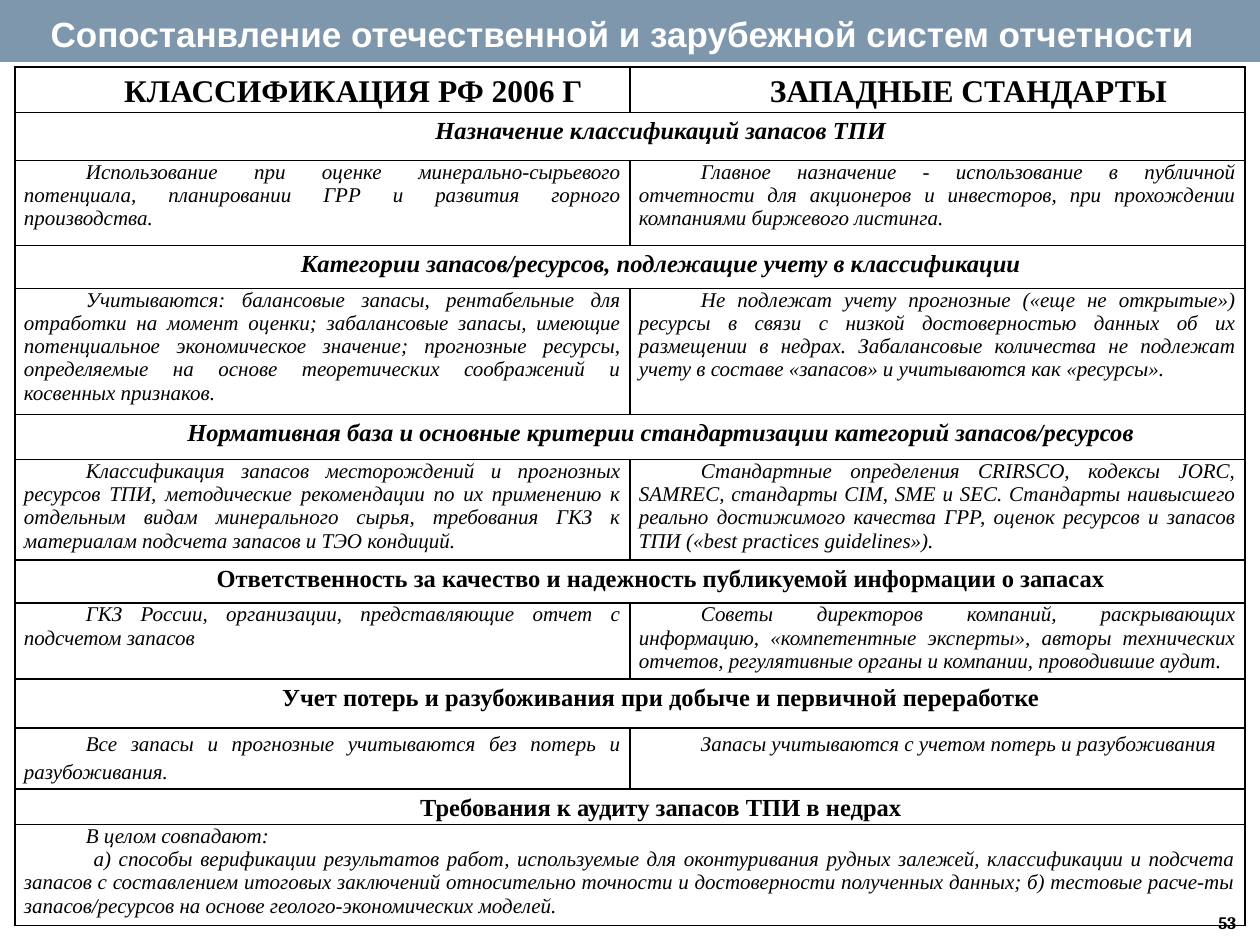
"""Build a slide comparing Russian and Western mineral reserve reporting."""
from lxml.etree import SubElement
from pptx import Presentation
from pptx.dml.color import RGBColor
from pptx.enum.shapes import MSO_SHAPE
from pptx.enum.text import MSO_ANCHOR, MSO_AUTO_SIZE, PP_ALIGN
from pptx.oxml.ns import qn
from pptx.util import Emu, Pt

SCALE = 914400 / 126


def px(length):
    return Emu(round(length * SCALE))


def color(value):
    return RGBColor.from_string(value)


HEADER = {"size": 18, "bold": True, "italic": False, "spacing": 1.2}
ITALIC_TOPIC = {"size": 14, "bold": True, "italic": True, "spacing": 1.2}
TOPIC = {"size": 14, "bold": True, "italic": False, "spacing": 1.2}
BODY = {"size": 12, "bold": False, "italic": True, "spacing": 1.0}
LOOSE_BODY = {**BODY, "spacing": 1.2}

ROWS = [
    (45, HEADER, ["КЛАССИФИКАЦИЯ РФ 2006 Г", "ЗАПАДНЫЕ СТАНДАРТЫ"]),
    (48, ITALIC_TOPIC, ["Назначение классификаций запасов ТПИ"]),
    (85, BODY, [
        "Использование при оценке минерально-сырьевого потенциала, планировании ГРР "
        "и развития горного производства.",
        "Главное назначение - использование в публичной отчетности для акционеров "
        "и инвесторов, при прохождении компаниями биржевого листинга."]),
    (43, ITALIC_TOPIC, ["Категории запасов/ресурсов, подлежащие учету в классификации"]),
    (125, BODY, [
        "Учитываются: балансовые запасы, рентабельные для отработки на момент оценки; "
        "забалансовые запасы, имеющие потенциальное экономическое значение; прогнозные "
        "ресурсы, определяемые на основе теоретических соображений и косвенных признаков.",
        "Не подлежат учету прогнозные («еще не открытые») ресурсы в связи с низкой "
        "достоверностью данных об их размещении в недрах. Забалансовые количества не "
        "подлежат учету в составе «запасов» и учитываются как «ресурсы»."]),
    (45, ITALIC_TOPIC, [
        "Нормативная база и основные критерии стандартизации категорий запасов/ресурсов"]),
    (100, BODY, [
        "Классификация запасов месторождений и прогнозных ресурсов ТПИ, методические "
        "рекомендации по их применению к отдельным видам минерального сырья, требования "
        "ГКЗ к материалам подсчета запасов и ТЭО кондиций.",
        "Стандартные определения CRIRSCO, кодексы JORC, SAMREC, стандарты СIM, SME и SEC. "
        "Стандарты наивысшего реально достижимого качества ГРР, оценок ресурсов и запасов "
        "ТПИ («best practices guidelines»)."]),
    (43, TOPIC, [
        "Ответственность за качество и надежность публикуемой информации о запасах"]),
    (76, BODY, [
        "ГКЗ России, организации, представляющие отчет с подсчетом запасов",
        "Советы директоров компаний, раскрывающих информацию, «компетентные эксперты», "
        "авторы технических отчетов, регулятивные органы и компании, проводившие аудит."]),
    (49, TOPIC, ["Учет потерь и разубоживания при добыче и первичной переработке"]),
    (61, LOOSE_BODY, [
        "Все запасы и прогнозные учитываются без потерь и разубоживания.",
        "Запасы учитываются с учетом потерь и разубоживания"]),
    (35, TOPIC, ["Требования к аудиту запасов ТПИ в недрах"]),
    (100, BODY, [
        "В целом совпадают:\n"
        " а) способы верификации результатов работ, используемые для оконтуривания рудных "
        "залежей, классификации и подсчета запасов с составлением итоговых заключений "
        "относительно точности и достоверности полученных данных; б) тестовые расче-ты "
        "запасов/ресурсов на основе геолого-экономических моделей."]),
]

deck = Presentation()
deck.slide_width, deck.slide_height = px(1260), px(945)
page = deck.slides.add_slide(deck.slide_layouts[5])

band = page.shapes.add_shape(MSO_SHAPE.RECTANGLE, 0, 0, px(1260), px(62))
band.shadow.inherit = False
band.fill.solid()
band.fill.fore_color.rgb = color("7E97AD")
band.line.fill.background()
title = page.shapes.title
title._element.addprevious(band._element)

title.left, title.top, title.width, title.height = px(0), px(6), px(1245), px(56)
title.text_frame.text = "Сопостанвление отечественной и зарубежной систем отчетности"
title.text_frame.vertical_anchor = MSO_ANCHOR.TOP
title.text_frame.auto_size = MSO_AUTO_SIZE.SHAPE_TO_FIT_TEXT
para = title.text_frame.paragraphs[0]
para.alignment = PP_ALIGN.CENTER
para.font.name, para.font.size, para.font.bold = "Arial", Pt(20), True
para.font.color.rgb = color("FFFFFF")

number = page.shapes.add_textbox(px(1206), px(900), px(53), px(45))
number.text_frame.word_wrap = True
number.text_frame.vertical_anchor = MSO_ANCHOR.MIDDLE
number.text_frame.text = "53"
para = number.text_frame.paragraphs[0]
para.font.name, para.font.size, para.font.bold = "Cambria", Pt(10), True
para.font.color.rgb = color("000000")

table_height = sum(height for height, style, texts in ROWS)
table = page.shapes.add_table(
    len(ROWS), 2, px(15), px(67), px(1230), px(table_height)).table
table.first_row = table.horz_banding = False

for row_index, (height, style, texts) in enumerate(ROWS):
    table.rows[row_index].height = px(height)
    for column in range(2):
        cell = table.cell(row_index, column)
        properties = cell._tc.get_or_add_tcPr()
        for side in ("a:lnL", "a:lnR", "a:lnT", "a:lnB"):
            border = SubElement(properties, qn(side), w=str(Pt(1)))
            SubElement(SubElement(border, qn("a:solidFill")), qn("a:srgbClr"), val="000000")
        cell.fill.background()
        cell.margin_left = cell.margin_right = px(9)
        cell.margin_top = cell.margin_bottom = 0
    if len(texts) == 1:
        table.cell(row_index, 0).merge(table.cell(row_index, 1))
    for column, text in enumerate(texts):
        frame = table.cell(row_index, column).text_frame
        frame.text = text
        for para in frame.paragraphs:
            para.alignment = PP_ALIGN.CENTER if style["bold"] else PP_ALIGN.JUSTIFY
            para.line_spacing = style["spacing"]
            para._p.get_or_add_pPr().set("indent", str(px(62)))
            para.font.name, para.font.size = "Times New Roman", Pt(style["size"])
            para.font.bold, para.font.italic = style["bold"], style["italic"]
            para.font.color.rgb = color("000000")

deck.save("out.pptx")
